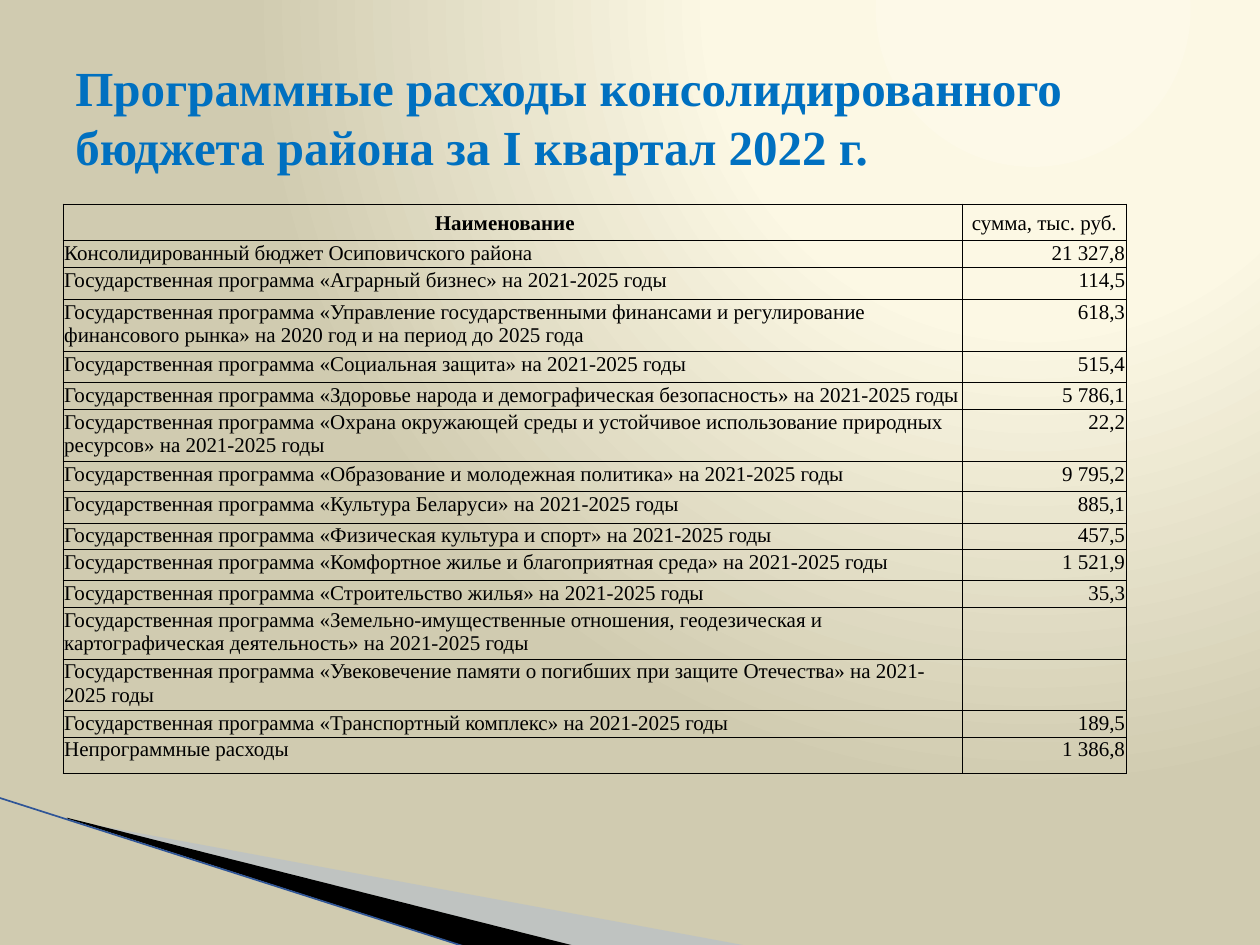
from pptx import Presentation
from pptx.dml.color import RGBColor
from pptx.enum import shapes, text
from pptx.oxml import parse_xml
from pptx.oxml.ns import nsdecls
from pptx.util import Pt

FONT = "Times New Roman"
COLORS = {
    "title": "0070C0",
    "ink": "000000",
    "wedge": "A7B9DB",
    "edge": "2F5597",
    "glow": "FDF9E8",
    "cream": "FCF8E4",
    "sand": "D0CBB0",
}
PROGRAM = "Государственная программа «{}» на 2021-2025 годы"
ROWS = [
    ("Наименование", "сумма, тыс. руб.", 21),
    ("Консолидированный бюджет Осиповичского района", "21 327,8", 15),
    (PROGRAM.format("Аграрный бизнес"), "114,5", 18.5),
    ("Государственная программа «Управление государственными финансами и регулирование "
     "финансового рынка» на 2020 год и на период до 2025 года", "618,3", 29),
    (PROGRAM.format("Социальная защита"), "515,4", 18),
    (PROGRAM.format("Здоровье народа и демографическая безопасность"), "5 786,1", 15),
    (PROGRAM.format("Охрана окружающей среды и устойчивое использование природных ресурсов"),
     "22,2", 30),
    (PROGRAM.format("Образование и молодежная политика"), "9 795,2", 17),
    (PROGRAM.format("Культура Беларуси"), "885,1", 18),
    (PROGRAM.format("Физическая культура и спорт"), "457,5", 15),
    (PROGRAM.format("Комфортное жилье и благоприятная среда"), "1 521,9", 18),
    (PROGRAM.format("Строительство жилья"), "35,3", 15),
    (PROGRAM.format("Земельно-имущественные отношения, геодезическая и картографическая "
                    "деятельность"), "", 29),
    (PROGRAM.format("Увековечение памяти о погибших при защите Отечества"), "", 29),
    (PROGRAM.format("Транспортный комплекс"), "189,5", 15),
    ("Непрограммные расходы", "1 386,8", 21),
]


def color(name):
    return RGBColor.from_string(COLORS[name])


def style_text(para, size, name, bold):
    for span in para.runs:
        span.font.name = FONT
        span.font.size = Pt(size)
        span.font.bold = bold
        span.font.color.rgb = color(name)


def paint_background(page):
    stops = "".join(
        f'<a:gs pos="{position * 1000}"><a:srgbClr val="{COLORS[name]}"/></a:gs>'
        for position, name in ((0, "glow"), (40, "cream"), (100, "sand")))
    page.element.cSld.insert(0, parse_xml(
        f'<p:bg {nsdecls("p", "a")}><p:bgPr><a:gradFill rotWithShape="1">'
        f'<a:gsLst>{stops}</a:gsLst><a:path path="circle">'
        '<a:fillToRect l="65000" t="0" r="0" b="98000"/></a:path>'
        '</a:gradFill><a:effectLst/></p:bgPr></p:bg>'))


def add_wedge(page, points, name, alpha=None):
    corners = [(Pt(x), Pt(y)) for x, y in points]
    builder = page.shapes.build_freeform(*corners[0])
    builder.add_line_segments(corners[1:], close=True)
    wedge = builder.convert_to_shape()
    wedge.shadow.inherit = False
    wedge.fill.solid()
    wedge.fill.fore_color.rgb = color(name)
    wedge.line.fill.background()
    if alpha:
        tint = wedge.fill._xPr.find(".//{*}srgbClr")
        tint.append(parse_xml(f'<a:alpha {nsdecls("a")} val="{alpha * 1000}"/>'))


def add_corner(page, left, top):
    def place(*points):
        return [(left + x, top + y) for x, y in points]

    add_wedge(page, place((39.6, 12.7), (428.4, 84.7), (328.3, 84.7), (39.6, 12)),
              "wedge", 40)
    add_wedge(page, place((38.2, 11.3), (329, 84.7), (267.8, 85.4), (38.9, 12)), "ink")
    (x1, y1), (x2, y2) = place((-0.7, -0.2), (267.1, 85.4))
    edge = page.shapes.add_connector(
        shapes.MSO_CONNECTOR.STRAIGHT, Pt(x1), Pt(y1), Pt(x2), Pt(y2))
    edge.line.color.rgb = color("edge")
    edge.line.width = Pt(0.95)
    edge._element.spPr.append(parse_xml(f'<a:effectLst {nsdecls("a")}/>'))


def add_title(page, left, top, width, height):
    box = page.shapes.add_textbox(Pt(left), Pt(top), Pt(width), Pt(height))
    frame = box.text_frame
    frame.word_wrap = True
    frame.vertical_anchor = text.MSO_ANCHOR.MIDDLE
    frame.text = "Программные расходы консолидированного бюджета района за I квартал 2022 г."
    style_text(frame.paragraphs[0], 28, "title", True)


def add_borders(cell):
    properties = cell._tc.get_or_add_tcPr()
    for index, side in enumerate("LRTB"):
        properties.insert(index, parse_xml(
            f'<a:ln{side} {nsdecls("a")} w="6350"><a:solidFill>'
            f'<a:srgbClr val="{COLORS["ink"]}"/></a:solidFill></a:ln{side}>'))


def fill_cell(cell, content, align, header, bold):
    cell.margin_left = cell.margin_right = cell.margin_top = Pt(0.7)
    cell.margin_bottom = Pt(0)
    cell.vertical_anchor = text.MSO_ANCHOR.MIDDLE if header else text.MSO_ANCHOR.TOP
    cell.fill.background()
    add_borders(cell)
    para = cell.text_frame.paragraphs[0]
    para.text = content
    para.alignment = align
    para.font.size = Pt(12)
    style_text(para, 12, "ink", bold)


def add_budget_table(page, left, top, widths):
    total = sum(height for _, _, height in ROWS)
    table = page.shapes.add_table(
        len(ROWS), len(widths), Pt(left), Pt(top), Pt(sum(widths)), Pt(total)).table
    table.first_row = table.horz_banding = False
    for column, width in zip(table.columns, widths):
        column.width = Pt(width)
    for index, (*contents, height) in enumerate(ROWS):
        header = index == 0
        table.rows[index].height = Pt(height)
        for position, content in enumerate(contents):
            align = (text.PP_ALIGN.CENTER if header else
                     (text.PP_ALIGN.LEFT, text.PP_ALIGN.RIGHT)[position])
            fill_cell(table.cell(index, position), content, align, header,
                      header and position == 0)
    table.cell(0, 0).margin_right = Pt(9.7)


def main():
    deck = Presentation()
    deck.slide_width, deck.slide_height = Pt(720), Pt(540)
    page = deck.slides.add_slide(deck.slide_layouts[6])
    paint_background(page)
    add_corner(page, 0, 456)
    add_title(page, 36, 21.6, 648, 90)
    add_budget_table(page, 36, 116.64, (514, 93.6))
    deck.save("out.pptx")


if __name__ == "__main__":
    main()
